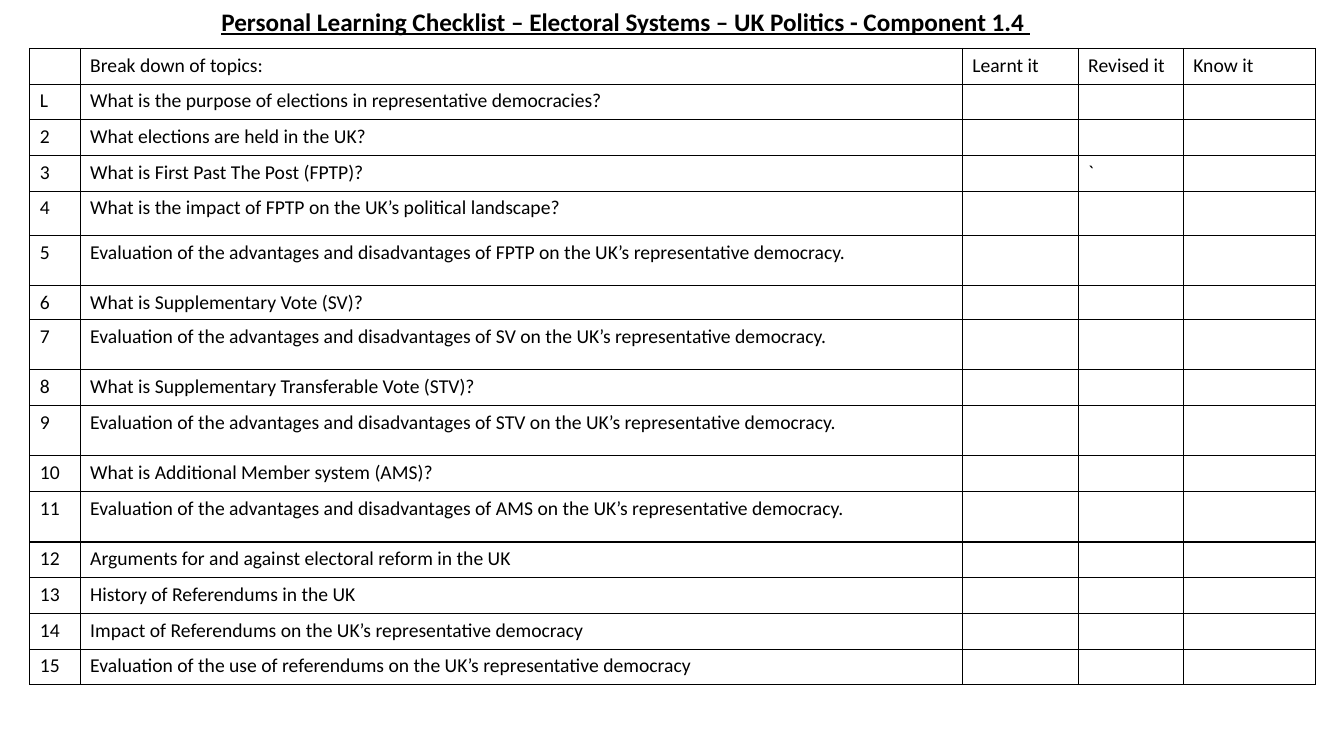
from lxml.etree import SubElement
from pptx import Presentation
from pptx.dml.color import RGBColor as Rgb
from pptx.enum.text import MSO_ANCHOR as Anchor, PP_ALIGN as Align
from pptx.oxml.ns import qn
from pptx.util import Cm, Pt

COLOURS = {"ink": "000000", "paper": "FFFFFF"}

COLUMN_WIDTHS = [1.27, 22.23, 2.92, 2.65, 3.33]
ROW_HEIGHT, SPACIOUS_ROW = 0.9, 1.27
OTHER_HEIGHTS = {4: 1.11, 6: 0.74}

HEADINGS = ["", "Break down of topics:", "Learnt it", "Revised it", "Know it"]


def evaluation(system):
    return (f"Evaluation of the advantages and disadvantages of {system} "
            "on the UK’s representative democracy.")


TOPICS = [
    "What is the purpose of elections in representative democracies?",
    "What elections are held in the UK?",
    "What is First Past The Post (FPTP)?",
    "What is the impact of FPTP on the UK’s political landscape?",
    evaluation("FPTP"),
    "What is Supplementary Vote (SV)?",
    evaluation("SV"),
    "What is Supplementary Transferable Vote (STV)?",
    evaluation("STV"),
    "What is Additional Member system (AMS)?",
    evaluation("AMS"),
    "Arguments for and against electoral reform in the UK",
    "History of Referendums in the UK",
    "Impact of Referendums on the UK’s representative democracy",
    "Evaluation of the use of referendums on the UK’s representative democracy",
]


class ChecklistPage:
    """Holds the style and the current slide."""

    font_name = "Calibri"
    title_size, table_size = 18, 14
    border_width = Pt(1)

    def __init__(self, deck):
        self.page = deck.slides.add_slide(deck.slide_layouts[6])

    def style(self, para, size):
        font = para.font
        font.name, font.size = self.font_name, Pt(size)
        font.color.rgb = Rgb.from_string(COLOURS["ink"])
        return font

    def title(self, text, left, top, width, height):
        box = self.page.shapes.add_textbox(Cm(left), Cm(top), Cm(width), Cm(height))
        frame = box.text_frame
        frame.word_wrap = True
        frame.vertical_anchor = Anchor.MIDDLE
        para = frame.paragraphs[0]
        para.text = text
        para.alignment, para.line_spacing = Align.CENTER, 0.9
        font = self.style(para, self.title_size)
        font.bold = font.underline = True

    def border(self, cell):
        properties = cell._tc.get_or_add_tcPr()
        for position, side in enumerate(("lnL", "lnR", "lnT", "lnB")):
            line = properties.makeelement(qn(f"a:{side}"), w=str(self.border_width))
            properties.insert(position, line)
            fill = SubElement(line, qn("a:solidFill"))
            SubElement(fill, qn("a:srgbClr"), val=COLOURS["ink"])

    def cell(self, cell, text):
        cell.fill.solid()
        cell.fill.fore_color.rgb = Rgb.from_string(COLOURS["paper"])
        self.border(cell)
        para = cell.text_frame.paragraphs[0]
        self.style(para, self.table_size)
        if text:
            para.text = text
        else:  # an empty cell keeps the row's text size
            SubElement(para._p, qn("a:endParaRPr"), sz=str(self.table_size * 100))

    def table(self, rows, widths, heights, left, top):
        frame = self.page.shapes.add_table(
            len(rows), len(widths), Cm(left), Cm(top), Cm(sum(widths)), Cm(sum(heights)))
        table = frame.table
        table.first_row = table.horz_banding = False
        for column, width in zip(table.columns, widths):
            column.width = Cm(width)
        for row, height, texts in zip(table.rows, heights, rows):
            row.height = Cm(height)
            for cell, text in zip(row.cells, texts):
                self.cell(cell, text)


def main():
    deck = Presentation()
    deck.slide_width, deck.slide_height = Cm(33.87), Cm(19.05)
    checklist = ChecklistPage(deck)

    # Heading
    checklist.title(
        "Personal Learning Checklist – Electoral Systems – UK Politics - Component 1.4 ",
        0, -0.05, 31.55, 1.27)

    # Topic rows; the first is lettered and the third has a stray mark
    rows = [HEADINGS] + [[str(number), topic, "", "", ""]
                         for number, topic in enumerate(TOPICS, 1)]
    rows[1][0] = "L"
    rows[3][3] = "`"

    # Evaluations of a voting system get taller rows
    heights = [SPACIOUS_ROW if "disadvantages" in row[1]
               else OTHER_HEIGHTS.get(index, ROW_HEIGHT)
               for index, row in enumerate(rows)]
    checklist.table(rows, COLUMN_WIDTHS, heights, 0.75, 1.22)

    deck.save("out.pptx")


if __name__ == "__main__":
    main()
